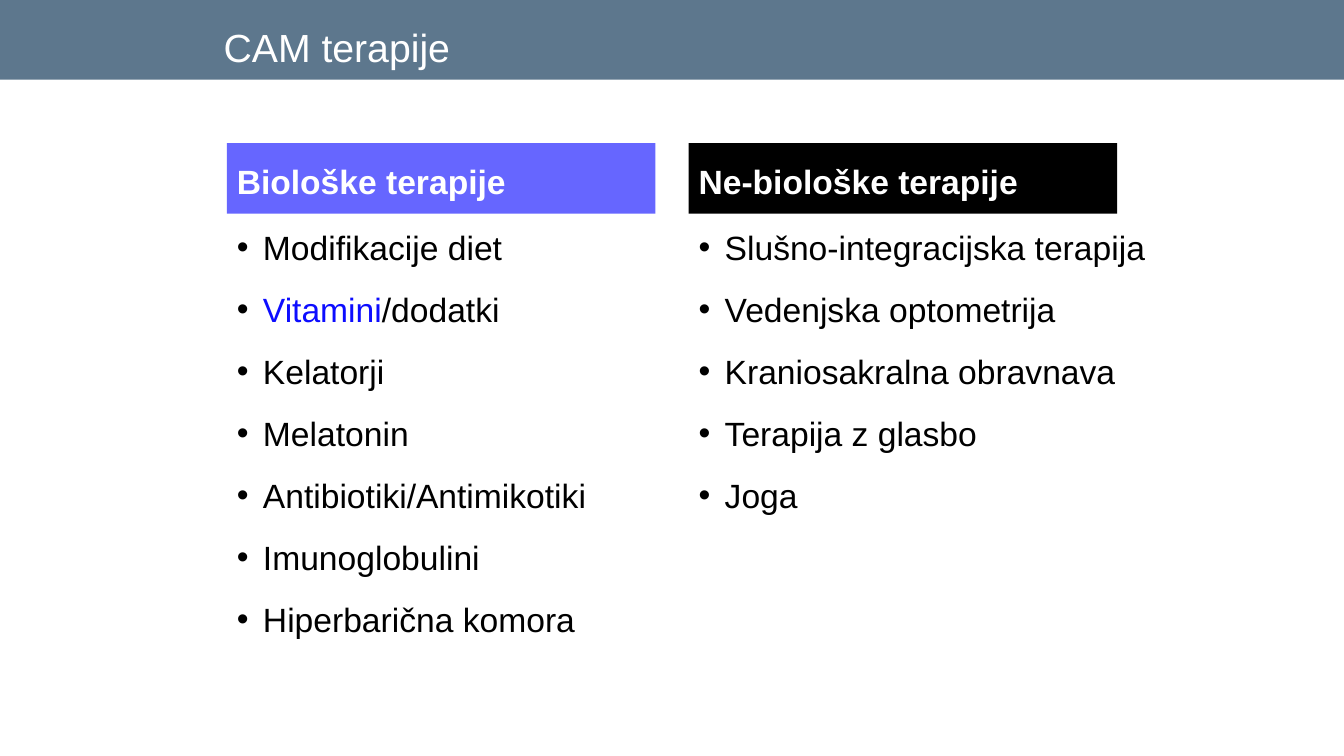
import pptx
import pptx.dml.color
import pptx.enum.shapes
import pptx.enum.text
import pptx.oxml
import pptx.oxml.ns
import pptx.util

PX = 9144
COLORS = {
    "band": "5D778D",
    "violet": "6666FF",
    "black": "000000",
    "white": "FFFFFF",
    "link": "0D0DFF",
}
ANCHOR = pptx.enum.text.MSO_ANCHOR
ALIGN = pptx.enum.text.PP_ALIGN
LEFT, STEP, WIDTH = 225, 458, 425
COLUMNS = [
    ("Biološke terapije", "violet", 425, [
        [("Modifikacije diet", "black")],
        [("Vitamini", "link"), ("/dodatki", "black")],
        [("Kelatorji", "black")],
        [("Melatonin", "black")],
        [("Antibiotiki/Antimikotiki", "black")],
        [("Imunoglobulini", "black")],
        [("Hiperbarična komora", "black")],
    ]),
    ("Ne-biološke terapije", "black", 483, [
        [("Slušno-integracijska terapija", "black")],
        [("Vedenjska optometrija", "black")],
        [("Kraniosakralna obravnava", "black")],
        [("Terapija z glasbo", "black")],
        [("Joga", "black")],
    ]),
]


def px(*sizes):
    return [pptx.util.Emu(size * PX) for size in sizes]


def rgb(name):
    return pptx.dml.color.RGBColor.from_string(COLORS[name])


def style(item, form):
    for name, value in form.items():
        setattr(item, name, value)


def add_bar(slide, box, color):
    kind = pptx.enum.shapes.MSO_SHAPE.RECTANGLE
    bar = slide.shapes.add_shape(kind, *px(*box))
    bar.shadow.inherit = False
    bar.fill.solid()
    bar.fill.fore_color.rgb = rgb(color)
    bar.line.fill.background()
    return bar


def set_frame(frame, anchor, top):
    style(frame, {
        "word_wrap": True,
        "vertical_anchor": anchor,
        "margin_top": px(top)[0],
    })


def add_run(para, text, color, size, bold=False):
    run = para.add_run()
    run.text = text
    style(run.font, {
        "name": "Arial",
        "size": pptx.util.Pt(size),
        "bold": bold,
    })
    run.font.color.rgb = rgb(color)


def add_title(slide, text):
    box = slide.shapes.add_textbox(*px(212, 8, 892, 67))
    set_frame(box.text_frame, ANCHOR.BOTTOM, 5)
    add_run(box.text_frame.paragraphs[0], text, "white", 28)


def add_head(slide, left, text, color):
    bar = add_bar(slide, (left, 142, WIDTH, 70), color)
    set_frame(bar.text_frame, ANCHOR.MIDDLE, 11)
    para = bar.text_frame.paragraphs[0]
    para.alignment = ALIGN.LEFT
    add_run(para, text, "white", 24, True)


def add_bullet(para):
    props = para._p.get_or_add_pPr()
    indent = 26 * PX
    props.set("marL", str(indent))
    props.set("indent", str(-indent))
    tint = pptx.oxml.ns.qn("a:buClr")
    color = props.makeelement(tint, {})
    value = pptx.oxml.ns.qn("a:srgbClr")
    color.append(props.makeelement(value, {"val": COLORS["black"]}))
    props.append(color)
    font = pptx.oxml.ns.qn("a:buFont")
    props.append(props.makeelement(font, {"typeface": "Arial"}))
    mark = pptx.oxml.ns.qn("a:buChar")
    props.append(props.makeelement(mark, {"char": "•"}))


def add_list(slide, left, width, items):
    box = slide.shapes.add_textbox(*px(left, 217, width, 392))
    frame = box.text_frame
    set_frame(frame, ANCHOR.TOP, 8)
    for row, parts in enumerate(items):
        para = frame.add_paragraph() if row else frame.paragraphs[0]
        para.space_after = pptx.util.Pt(15.5)
        add_bullet(para)
        for text, color in parts:
            add_run(para, text, color, 24)


def main():
    deck = pptx.Presentation()
    wide, high = px(1333, 750)
    style(deck, {"slide_width": wide, "slide_height": high})
    slide = deck.slides.add_slide(deck.slide_layouts[6])
    add_bar(slide, (0, 0, 1333, 79), "band")
    add_title(slide, "CAM terapije")
    for col, (head, color, width, items) in enumerate(COLUMNS):
        left = LEFT + col * STEP
        add_list(slide, left, width, items)
        add_head(slide, left, head, color)
    deck.save("out.pptx")


if __name__ == "__main__":
    main()
